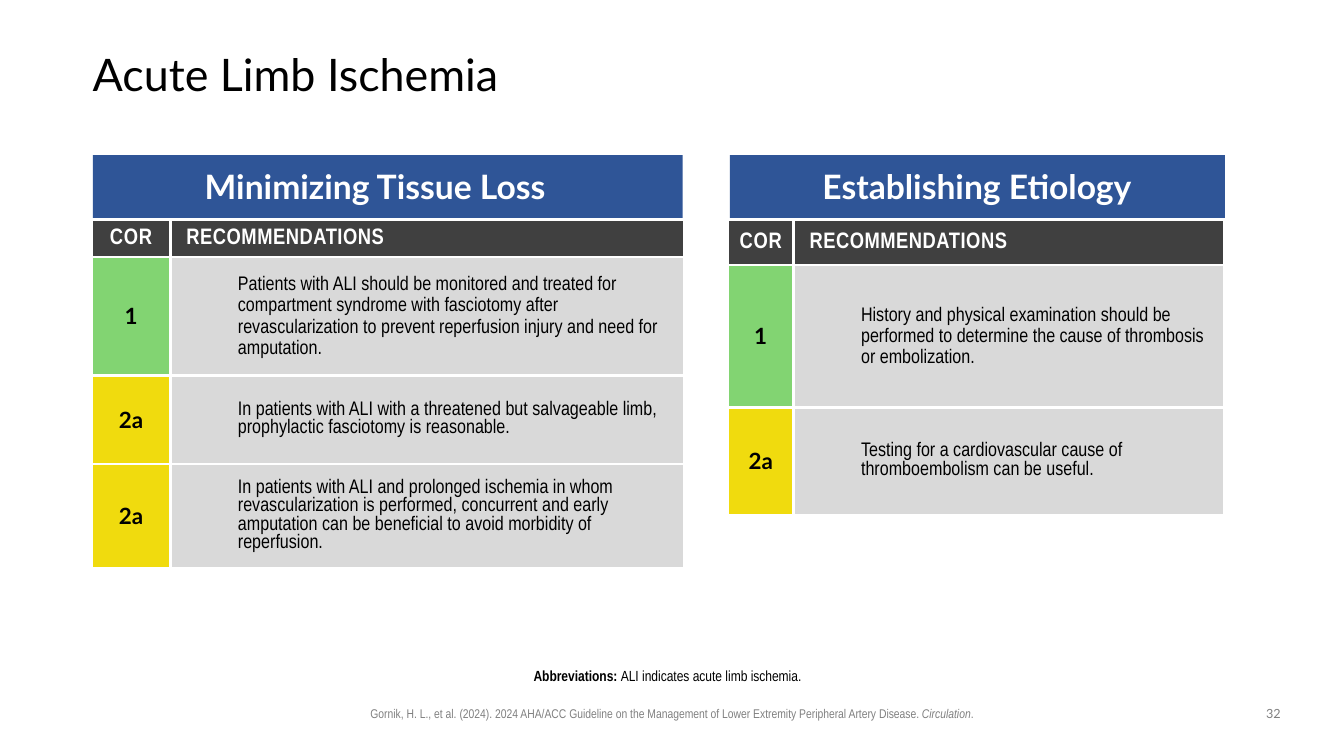
from dataclasses import dataclass

from lxml.etree import SubElement
from pptx import Presentation
from pptx.dml.color import RGBColor
from pptx.enum.shapes import MSO_SHAPE
from pptx.enum.text import MSO_ANCHOR, PP_ALIGN
from pptx.oxml.ns import qn
from pptx.util import Inches, Pt


@dataclass(frozen=True)
class Theme:
    head: str = "Lato"
    body: str = "Arial Narrow"
    black: str = "000000"
    white: str = "FFFFFF"
    blue: str = "2F5597"
    dark: str = "404040"
    light: str = "D9D9D9"
    gray: str = "808080"
    green: str = "82D472"
    yellow: str = "F0DB0E"
    title: float = 32
    band: float = 24
    label: float = 16
    text: float = 14
    note: float = 10.5
    small: float = 9


T = Theme()
GRADES = {"1": T.green, "2a": T.yellow}
PAD = (0.1, 0.05, 0.1, 0.05)
CELL = (0.05, 0.05, 0.05, 0.05)
NONE = (0, 0, 0, 0)


def add_run(para, text, size, color, font=T.body, bold=False, italic=False,
            track=0):
    run = para.add_run()
    run.text = text
    face = run.font
    face.name, face.size = font, Pt(size)
    face.bold, face.italic = bold, italic
    face.color.rgb = RGBColor.from_string(color)
    if track:
        face._element.set("spc", str(track))


def add_box(slide, area, pad=PAD, align=PP_ALIGN.CENTER,
            anchor=MSO_ANCHOR.TOP, line=None):
    frame = slide.shapes.add_textbox(*map(Inches, area)).text_frame
    frame.word_wrap = True
    frame.vertical_anchor = anchor
    (frame.margin_left, frame.margin_top,
     frame.margin_right, frame.margin_bottom) = map(Inches, pad)
    para = frame.paragraphs[0]
    para.alignment = align
    if line:
        para.line_spacing = line
    return para


def add_band(slide, area, label, text):
    # Blue bar with its heading
    bar = slide.shapes.add_shape(MSO_SHAPE.RECTANGLE, *map(Inches, area))
    bar.shadow.inherit = False
    bar.fill.solid()
    bar.fill.fore_color.rgb = RGBColor.from_string(T.blue)
    bar.line.fill.background()
    para = add_box(slide, label, NONE, anchor=MSO_ANCHOR.MIDDLE, line=0.9)
    add_run(para, text, T.band, T.white, T.head, bold=True)


def set_cell(cell, fill, pad, indent=0, align=PP_ALIGN.LEFT):
    # Borders come before the fill in the cell properties
    props = cell._tc.get_or_add_tcPr()
    for side in "LRTB":
        edge = SubElement(props, qn(f"a:ln{side}"), w=str(Pt(2.25)))
        solid = SubElement(edge, qn("a:solidFill"))
        SubElement(solid, qn("a:srgbClr"), val=T.white)
    cell.fill.solid()
    cell.fill.fore_color.rgb = RGBColor.from_string(fill)
    cell.vertical_anchor = MSO_ANCHOR.MIDDLE
    (cell.margin_left, cell.margin_top,
     cell.margin_right, cell.margin_bottom) = map(Inches, pad)
    para = cell.text_frame.paragraphs[0]
    para.alignment = align
    if indent:
        props = para._p.get_or_add_pPr()
        props.set("marL", str(Inches(indent)))
        props.set("indent", "0")
    return para


def add_grid(slide, left, top, cols, rows, items):
    shape = slide.shapes.add_table(len(rows), len(cols), Inches(left),
                                   Inches(top), Inches(sum(cols)),
                                   Inches(sum(rows)))
    grid = shape.table
    for col, width in zip(grid.columns, cols):
        col.width = Inches(width)
    for row, height in zip(grid.rows, rows):
        row.height = Inches(height)

    # Header row
    para = set_cell(grid.cell(0, 0), T.dark, PAD, align=PP_ALIGN.CENTER)
    add_run(para, "COR", T.label, T.white, bold=True, track=50)
    para = set_cell(grid.cell(0, 1), T.dark, PAD, 0.06)
    add_run(para, "RECOMMENDATIONS", T.label, T.white, bold=True, track=40)

    # Graded advice
    for row, (grade, text) in enumerate(items, 1):
        para = set_cell(grid.cell(row, 0), GRADES[grade], CELL,
                        align=PP_ALIGN.CENTER)
        add_run(para, grade, T.label, T.black, T.head, bold=True)
        para = set_cell(grid.cell(row, 1), T.light, CELL, 0.62)
        if grade == "1":
            para.line_spacing = 1.15
        add_run(para, text, T.text, T.black)


def main():
    deck = Presentation()
    deck.slide_width, deck.slide_height = Inches(13.33), Inches(7.5)
    slide = deck.slides.add_slide(deck.slide_layouts[6])

    # Title
    para = add_box(slide, (0.92, 0.4, 11.5, 0.72), NONE, PP_ALIGN.LEFT,
                   MSO_ANCHOR.MIDDLE, 0.9)
    add_run(para, "Acute Limb Ischemia", T.title, T.black, T.head)

    # Left panel
    add_band(slide, (0.92, 1.54, 5.85, 0.66), (1.42, 1.71, 4.6, 0.32),
             "Minimizing Tissue Loss")
    add_grid(slide, 0.91, 2.18, (0.78, 5.1), (0.37, 1.17, 0.88, 0.88), (
        ("1", "Patients with ALI should be monitored and treated for "
              "compartment syndrome with fasciotomy after "
              "revascularization to prevent reperfusion injury and need "
              "for amputation."),
        ("2a", "In patients with ALI with a threatened but salvageable "
               "limb, prophylactic fasciotomy is reasonable."),
        ("2a", "In patients with ALI and prolonged ischemia in whom "
               "revascularization is performed, concurrent and early "
               "amputation can be beneficial to avoid morbidity of "
               "reperfusion."),
    ))

    # Right panel
    add_band(slide, (7.24, 1.54, 4.91, 0.66), (7.39, 1.71, 4.6, 0.32),
             "Establishing Etiology")
    add_grid(slide, 7.22, 2.18, (0.65, 4.27), (0.45, 1.41, 1.07), (
        ("1", "History and physical examination should be performed to "
              "determine the cause of thrombosis or embolization."),
        ("2a", "Testing for a cardiovascular cause of thromboembolism "
               "can be useful."),
    ))

    # Notes at the foot
    para = add_box(slide, (2.35, 6.59, 8.64, 0.23), (0, 0.05, 0.1, 0.05),
                   line=0.9)
    add_run(para, "Abbreviations: ", T.note, T.black, bold=True)
    add_run(para, "ALI indicates acute limb ischemia.", T.note, T.black)

    para = add_box(slide, (2.94, 6.95, 7.45, 0.25))
    add_run(para, "Gornik, H. L., et al. (2024). 2024 AHA/ACC Guideline on "
            "the Management of Lower Extremity Peripheral Artery Disease. ",
            T.small, T.gray)
    add_run(para, "Circulation", T.small, T.gray, italic=True)
    add_run(para, ".", T.small, T.gray)

    para = add_box(slide, (12.42, 6.95, 0.42, 0.26))
    add_run(para, "32", T.small, T.gray, T.head)

    deck.save("out.pptx")


if __name__ == "__main__":
    main()
